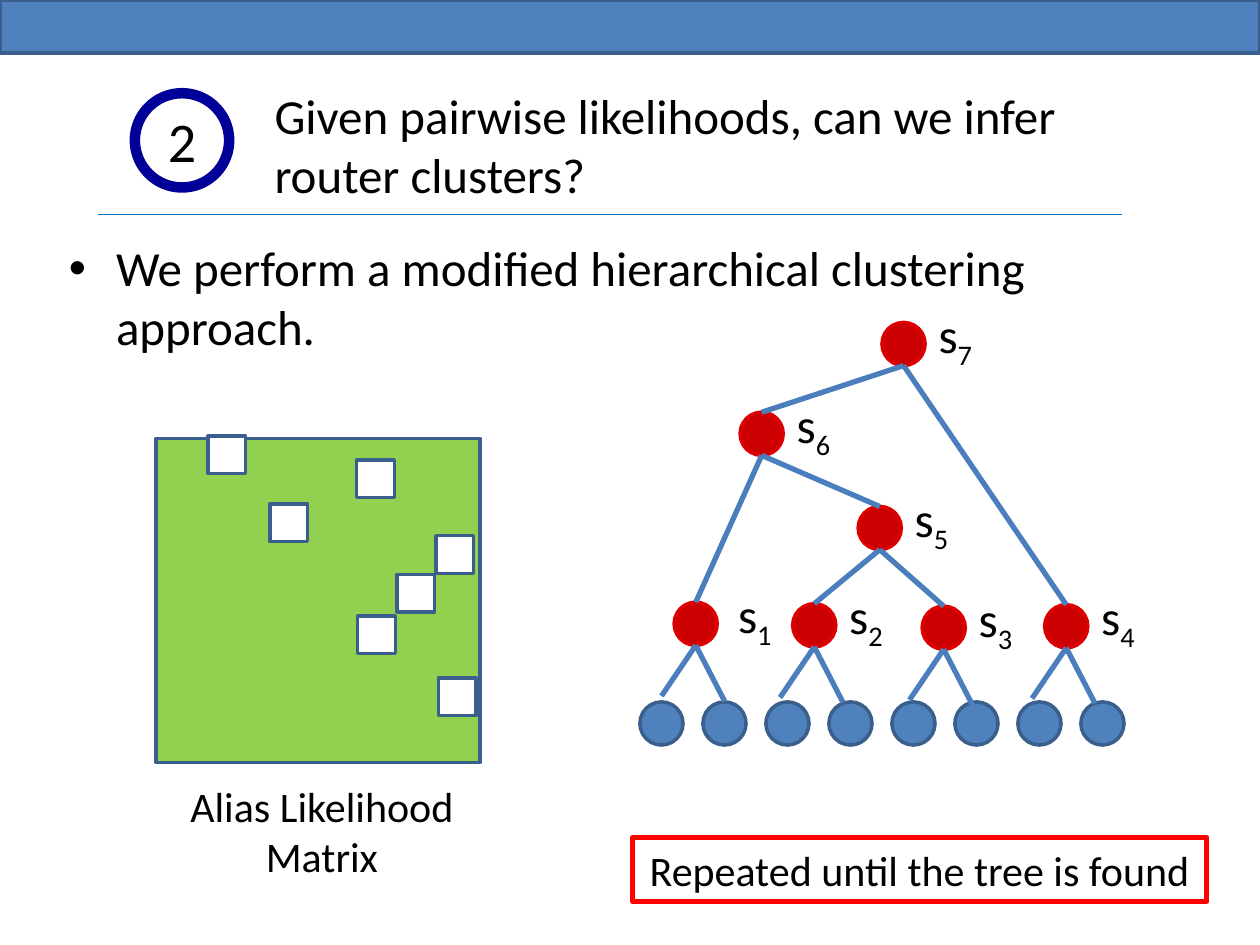
from dataclasses import dataclass

from lxml import etree
from pptx import Presentation
from pptx.dml.color import RGBColor
from pptx.enum.shapes import MSO_CONNECTOR, MSO_SHAPE
from pptx.enum.text import MSO_ANCHOR, MSO_AUTO_SIZE, PP_ALIGN
from pptx.oxml.ns import qn
from pptx.util import Cm, Pt

RECT, OVAL = MSO_SHAPE.RECTANGLE, MSO_SHAPE.OVAL
STRAIGHT = MSO_CONNECTOR.STRAIGHT
LEFT, CENTER = PP_ALIGN.LEFT, PP_ALIGN.CENTER
TOP, MIDDLE = MSO_ANCHOR.TOP, MSO_ANCHOR.MIDDLE
FIT_SHAPE, NO_FIT = MSO_AUTO_SIZE.SHAPE_TO_FIT_TEXT, MSO_AUTO_SIZE.NONE

FONT = "Calibri"
COLORS = {
    "text": "000000", "white": "FFFFFF", "blue": "4F81BD", "outline": "3A5F8C",
    "badge": "000099", "matrix": "92D050", "node": "CC0000", "node_edge": "DC0000",
    "branch": "4B7EBC", "result": "FF0000", "rule": "0070C0",
}
NODE_SIZE = 0.87
CELL_SIZE = 0.76
LEAF_COUNT, LEAF_LEFT, LEAF_TOP, LEAF_PITCH = 8, 12.9, 14.15, 1.27
LEAF_BRANCHES = ((-0.69, 1.02), (0.58, 1.12))


@dataclass(frozen=True)
class Box:
    left: float
    top: float
    width: float
    height: float

    def lengths(self) -> tuple:
        return Cm(self.left), Cm(self.top), Cm(self.width), Cm(self.height)


@dataclass(frozen=True)
class Cluster:
    number: str
    left: float
    top: float
    children: tuple = ()
    label_gap: float = 0.89

    @property
    def center(self) -> float:
        return self.left + NODE_SIZE / 2

    @property
    def bottom(self) -> float:
        return self.top + NODE_SIZE


S1 = Cluster("1", 13.59, 12.14, label_gap=1.04)
S2 = Cluster("2", 15.98, 12.17)
S3 = Cluster("3", 18.59, 12.22)
S4 = Cluster("4", 21.06, 12.19)
S5 = Cluster("5", 17.3, 10.21, (S2, S3))
S6 = Cluster("6", 14.92, 8.31, (S1, S5))
S7 = Cluster("7", 17.78, 6.5, (S6, S4))
CLUSTERS = (S1, S2, S3, S4, S5, S6, S7)

MATRIX = Box(3.15, 8.84, 6.53, 6.53)
MATRIX_CELLS = (
    (4.19, 8.79), (7.19, 9.27), (5.44, 10.16), (8.79, 10.8),
    (8.0, 11.58), (7.21, 12.42), (8.84, 13.67),
)


def color(name: str) -> RGBColor:
    return RGBColor.from_string(COLORS[name])


def draw_shape(slide, kind, box: Box, fill: str, edge: str = "outline", weight: float = 2):
    shape = slide.shapes.add_shape(kind, *box.lengths())
    shape.shadow.inherit = False
    if fill:
        shape.fill.solid()
        shape.fill.fore_color.rgb = color(fill)
    else:
        shape.fill.background()
    shape.line.color.rgb = color(edge)
    shape.line.width = Pt(weight)
    return shape


def draw_line(slide, start: tuple, end: tuple, edge: str = "branch", weight: float = 3) -> None:
    line = slide.shapes.add_connector(STRAIGHT, *(Cm(value) for value in (*start, *end)))
    line.line.color.rgb = color(edge)
    line.line.width = Pt(weight)
    etree.SubElement(line._element.spPr, qn("a:effectLst"))


def add_run(paragraph, text: str, size: float):
    run = paragraph.add_run()
    run.text = text
    run.font.name = FONT
    run.font.size = Pt(size)
    run.font.color.rgb = color("text")
    return run


def write(shape, text: str, size: float, align=LEFT, anchor=TOP, fit=NO_FIT, wrap: bool = True):
    frame = shape.text_frame
    frame.word_wrap = wrap
    frame.auto_size = fit
    frame.vertical_anchor = anchor
    paragraph = frame.paragraphs[0]
    paragraph.alignment = align
    add_run(paragraph, text, size)
    return paragraph


def draw_heading(slide) -> None:
    draw_shape(slide, RECT, Box(0, 0, 25.4, 1.07), "blue")
    heading = slide.shapes.title
    heading.left, heading.top, heading.width, heading.height = Box(5.28, 1.6, 17.86, 2.64).lengths()
    write(heading, "Given pairwise likelihoods, can we infer router clusters?", 28)
    badge = draw_shape(slide, OVAL, Box(2.72, 1.88, 1.9, 1.9), "white", "badge", 6)
    write(badge, "2", 32, CENTER, MIDDLE)
    draw_line(slide, (1.98, 4.32), (22.61, 4.32), "rule", 0.75)


def draw_approach(slide) -> None:
    approach = slide.shapes.add_textbox(*Box(1.14, 4.67, 22.86, 11.63).lengths())
    paragraph = write(approach, "We perform a modified hierarchical clustering approach.", 28)
    properties = paragraph._p.get_or_add_pPr()
    properties.set("marL", str(Cm(0.95)))
    properties.set("indent", str(-Cm(0.95)))
    etree.SubElement(properties, qn("a:buFont")).set("typeface", "Arial")
    etree.SubElement(properties, qn("a:buChar")).set("char", "•")


def draw_matrix(slide) -> None:
    draw_shape(slide, RECT, MATRIX, "matrix")
    for left, top in MATRIX_CELLS:
        draw_shape(slide, RECT, Box(left, top, CELL_SIZE, CELL_SIZE), "white")
    caption = slide.shapes.add_textbox(*Box(3.43, 15.6, 6.12, 2.31).lengths())
    write(caption, "Alias Likelihood Matrix", 24, CENTER, fit=FIT_SHAPE)


def draw_cluster(slide, cluster: Cluster) -> None:
    box = Box(cluster.left, cluster.top, NODE_SIZE, NODE_SIZE)
    draw_shape(slide, OVAL, box, "node", "node_edge")
    start = (cluster.center, cluster.bottom)
    ends = [(child.center, child.top) for child in cluster.children] or [
        (start[0] + across, start[1] + down) for across, down in LEAF_BRANCHES
    ]
    for end in ends:
        draw_line(slide, start, end)
    label_box = Box(cluster.left + cluster.label_gap, cluster.top - 0.49, 1.24, 1.45)
    label = slide.shapes.add_textbox(*label_box.lengths())
    paragraph = write(label, "s", 28, fit=FIT_SHAPE, wrap=False)
    subscript = add_run(paragraph, cluster.number, 28)
    subscript.font._element.set("baseline", "-25000")


def draw_tree(slide) -> None:
    for index in range(LEAF_COUNT):
        left = LEAF_LEFT + index * LEAF_PITCH
        draw_shape(slide, OVAL, Box(left, LEAF_TOP, NODE_SIZE, NODE_SIZE), "blue")
    for cluster in CLUSTERS:
        draw_cluster(slide, cluster)
    result = draw_shape(slide, RECT, Box(12.75, 16.89, 11.58, 1.28), "", "result", 3)
    write(result, "Repeated until the tree is found", 24, CENTER, fit=FIT_SHAPE)


def main() -> None:
    deck = Presentation()
    deck.slide_width, deck.slide_height = Cm(25.4), Cm(19.05)
    slide = deck.slides.add_slide(deck.slide_layouts.get_by_name("Title Only"))
    draw_heading(slide)
    draw_approach(slide)
    draw_matrix(slide)
    draw_tree(slide)
    deck.save("out.pptx")


if __name__ == "__main__":
    main()
